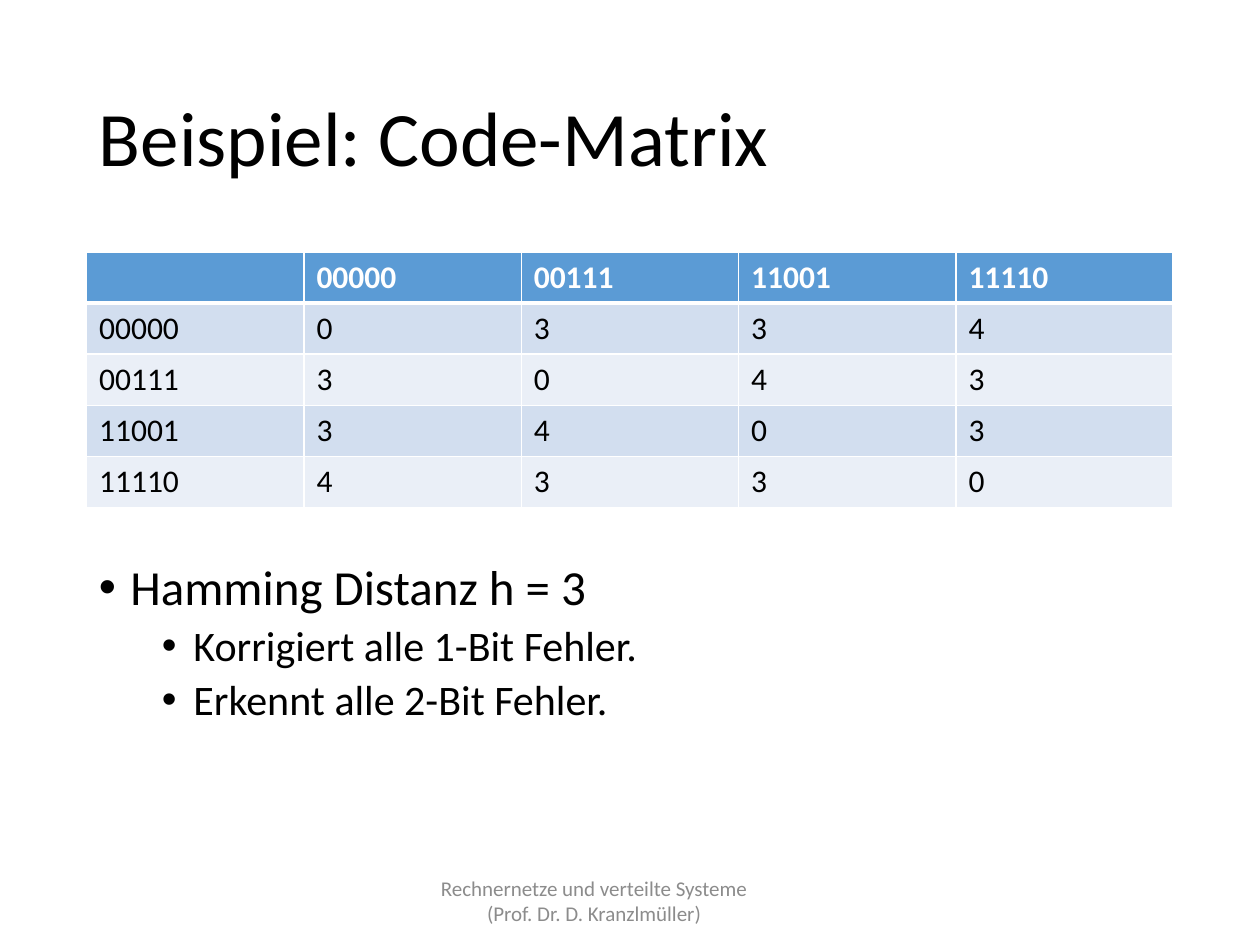
from lxml import etree
from pptx import Presentation
from pptx.dml.color import RGBColor
from pptx.enum import text
from pptx.oxml import ns
from pptx.util import Pt

COLORS = {
    "ink": "000000",
    "white": "FFFFFF",
    "header": "5B9BD5",
    "band_dark": "D2DEEF",
    "band_light": "EAEFF7",
    "footer": "8C8C8C",
}
FONT = "Calibri"
CODES = ["00000", "00111", "11001", "11110"]


def style_font(font, size, color, bold=False):
    font.name = FONT
    font.size = Pt(size)
    font.bold = bold
    font.color.rgb = RGBColor.from_string(COLORS[color])


def add_text(page, box, lines, size, color, anchor):
    frame = page.shapes.add_textbox(*map(Pt, box)).text_frame
    frame.word_wrap = True
    frame.vertical_anchor = anchor
    frame.text = "\n".join(lines)
    for para in frame.paragraphs:
        for span in para.runs:
            style_font(span.font, size, color)
    return frame.paragraphs


def add_title(page, box):
    para = add_text(page, box, ["Beispiel: Code-Matrix"], 44, "ink",
                    text.MSO_ANCHOR.MIDDLE)[0]
    para.line_spacing = 0.9


def set_borders(cell, bottom_width, top_width):
    properties = cell._tc.get_or_add_tcPr()
    widths = {"lnL": 1, "lnR": 1, "lnT": top_width, "lnB": bottom_width}
    for index, (side, width) in enumerate(widths.items()):
        line = etree.Element(ns.qn(f"a:{side}"), w=str(Pt(width)))
        fill = etree.SubElement(line, ns.qn("a:solidFill"))
        etree.SubElement(fill, ns.qn("a:srgbClr"), val=COLORS["white"])
        properties.insert(index, line)


def hamming_distance(first, second):
    return sum(a != b for a, b in zip(first, second))


def add_code_matrix(page, box):
    rows = [["", *CODES]]
    rows += [[code, *(str(hamming_distance(code, other)) for other in CODES)]
             for code in CODES]
    count = len(rows)
    table = page.shapes.add_table(count, count, *map(Pt, box)).table
    for column in table.columns:
        column.width = Pt(box[2] / count)
    for row_index, values in enumerate(rows):
        table.rows[row_index].height = Pt(box[3] / count)
        is_header = row_index == 0
        band = "band_dark" if row_index % 2 else "band_light"
        for column_index, value in enumerate(values):
            cell = table.cell(row_index, column_index)
            cell.text = value
            cell.fill.solid()
            cell.fill.fore_color.rgb = RGBColor.from_string(
                COLORS["header" if is_header else band])
            set_borders(cell, 3 if is_header else 1, 3 if row_index == 1 else 1)
            style_font(cell.text_frame.paragraphs[0].font, 18,
                       "white" if is_header else "ink", is_header)


def add_conclusions(page, box):
    lines = ["Hamming Distanz h = 3", "Korrigiert alle 1-Bit Fehler.",
             "Erkennt alle 2-Bit Fehler."]
    paragraphs = add_text(page, box, lines, 28, "ink", text.MSO_ANCHOR.TOP)
    for index, para in enumerate(paragraphs):
        para.level = min(index, 1)
        para.line_spacing = 0.9
        para.space_before = Pt(5 * para.level)
        para.runs[0].font.size = Pt(28 - 4 * para.level)
        properties = para._p.get_or_add_pPr()
        properties.set("marL", str(Pt(18 + 36 * para.level)))
        properties.set("indent", str(Pt(-18)))
        etree.SubElement(properties, ns.qn("a:buFont"), typeface="Arial")
        etree.SubElement(properties, ns.qn("a:buChar"), char="•")


def add_footer(page, box):
    lines = ["Rechnernetze und verteilte Systeme", "(Prof. Dr. D. Kranzlmüller)"]
    paragraphs = add_text(page, box, lines, 12, "footer", text.MSO_ANCHOR.MIDDLE)
    for para in paragraphs:
        para.alignment = text.PP_ALIGN.CENTER
    paragraphs[0]._p.get_or_add_pPr().set("marR", str(Pt(41)))


def main():
    deck = Presentation()
    deck.slide_width, deck.slide_height = Pt(720), Pt(540)
    page = deck.slides.add_slide(deck.slide_layouts[6])
    left, width = 49.5, 621
    add_title(page, (left, 28.75, width, 104.4))
    add_code_matrix(page, (left, 144, width, 146))
    add_footer(page, (238.5, 500.5, 243, 28.75))
    add_conclusions(page, (left, 318.25, width, 167.75))
    deck.save("out.pptx")


if __name__ == "__main__":
    main()
